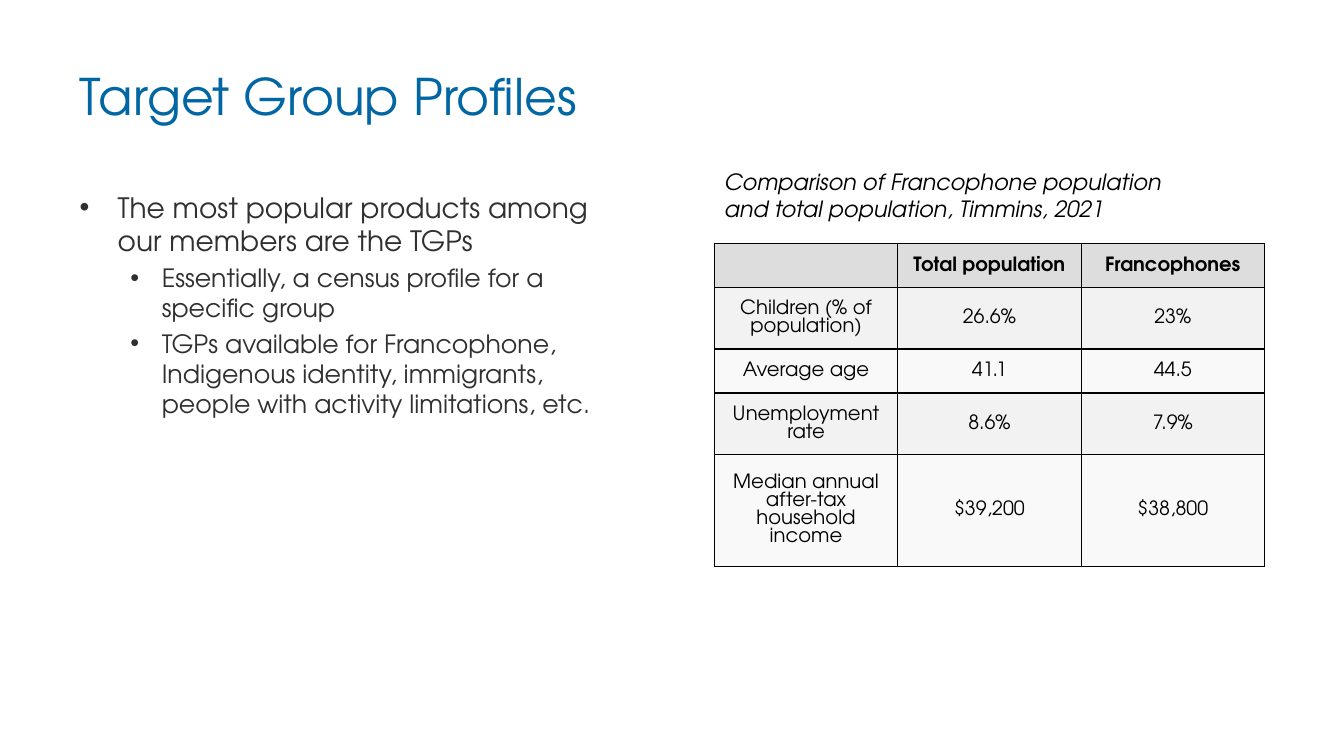
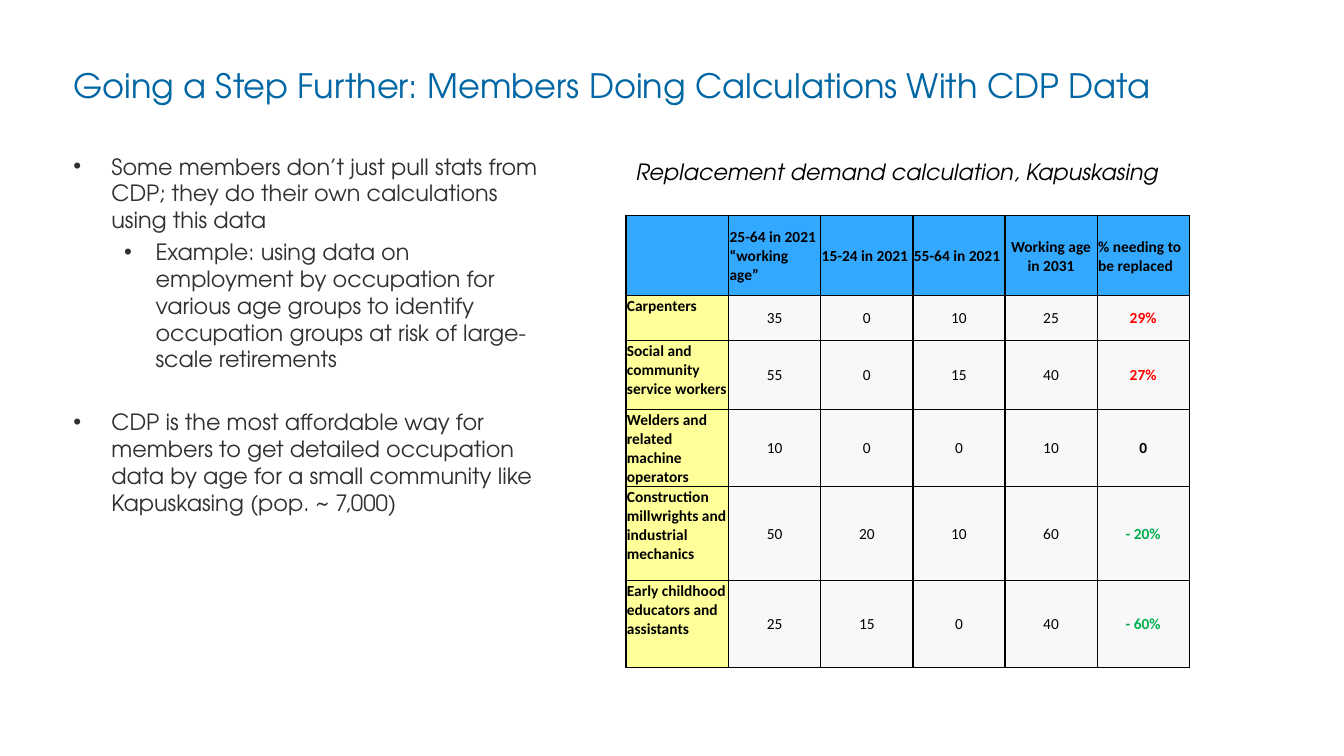
"""Build two slides on community data profiles, each with bullets and a table."""
from lxml import etree
from pptx import Presentation
from pptx.dml.color import RGBColor
from pptx.enum import text as t
from pptx.oxml import ns
from pptx.util import Pt

COLORS = {
    "title": "0066A4", "body": "303030", "black": "000000",
    "head": "DDDDDD", "odd": "F2F2F2", "even": "F9F9F9",
    "blue": "33A8FF", "yellow": "FFFF99", "pale": "F8F8F8",
    "rise": "FF0000", "fall": "00B050",
}
FONT = "TeX Gyre Adventor"
INDENTS = [(27.2, -27.2), (58.7, -22.5)]
LEFT, CENTER = t.PP_ALIGN.LEFT, t.PP_ALIGN.CENTER
TOP, MIDDLE = t.MSO_ANCHOR.TOP, t.MSO_ANCHOR.MIDDLE
NO_INSETS = dict.fromkeys(("margin_left", "margin_top", "margin_right", "margin_bottom"), 0)
TIGHT_INSETS = NO_INSETS | dict.fromkeys(("margin_left", "margin_top", "margin_right"), Pt(0.7))


def rgb(name):
    """Look up a colour by name."""
    return RGBColor.from_string(COLORS[name])


def apply(target, values):
    """Set attributes from a dict of format values."""
    for key, value in values.items():
        setattr(target, key, value)


def add_run(p, content, size, color, name=FONT, **style):
    """Add one formatted run to a paragraph."""
    r = p.add_run()
    r.text = content
    apply(r.font, {"size": Pt(size), "name": name, **style})
    r.font.color.rgb = rgb(color)


def add_box(s, box, insets=None):
    """Add a wrapping text box and return its text frame."""
    tf = s.shapes.add_textbox(*map(Pt, box)).text_frame
    apply(tf, {"word_wrap": True, "vertical_anchor": TOP, **(insets or {})})
    return tf


def add_title(s, content, left, width, size):
    """Add the slide title."""
    tf = add_box(s, (left, 46.5, width, 48.2), NO_INSETS)
    add_run(tf.paragraphs[0], content, size, "title")


def add_caption(s, content, box):
    """Add the italic caption above a table."""
    add_run(add_box(s, box).paragraphs[0], content, 16, "black", italic=True)


def add_bullet(p, level):
    """Give a paragraph a hanging round bullet."""
    margin, indent = INDENTS[level]
    p.level = level
    pPr = p._p.get_or_add_pPr()
    pPr.set("marL", str(Pt(margin)))
    pPr.set("indent", str(Pt(indent)))
    etree.SubElement(pPr, ns.qn("a:buFont")).set("typeface", "Arial")
    etree.SubElement(pPr, ns.qn("a:buChar")).set("char", "•")


def add_bullets(s, box, items):
    """Add a bullet list from (level, size, space before, text) items."""
    tf = add_box(s, box, NO_INSETS)
    for i, (level, size, before, content) in enumerate(items):
        p = tf.add_paragraph() if i else tf.paragraphs[0]
        add_bullet(p, level)
        p.space_before = Pt(before)
        add_run(p, content, size, "body")


def add_borders(cell):
    """Draw a thin black line on every side of a cell."""
    tcPr = cell._tc.get_or_add_tcPr()
    for side in ("lnL", "lnR", "lnT", "lnB"):
        ln = etree.SubElement(tcPr, ns.qn(f"a:{side}"), w=str(Pt(1)))
        fill = etree.SubElement(ln, ns.qn("a:solidFill"))
        etree.SubElement(fill, ns.qn("a:srgbClr"), val=COLORS["black"])


def add_table(s, left, top, widths, heights, rows, cell_format):
    """Add a bordered table, styling each cell by cell_format(row, col, text)."""
    box = (left, top, sum(widths), sum(heights))
    table = s.shapes.add_table(len(rows), len(widths), *map(Pt, box)).table
    apply(table, {"first_row": False, "horz_banding": False})
    for col, width in zip(table.columns, widths):
        col.width = Pt(width)
    for i, (row, height) in enumerate(zip(rows, heights)):
        table.rows[i].height = Pt(height)
        for j, content in enumerate(row):
            cell = table.cell(i, j)
            fill, frame, align, font = cell_format(i, j, content)
            add_borders(cell)
            cell.fill.solid()
            cell.fill.fore_color.rgb = rgb(fill)
            apply(cell, frame)
            p = cell.text_frame.paragraphs[0]
            p.alignment = align
            if content:
                add_run(p, content, **font)


def profile_cell(i, j, content):
    """Style a cell of the population comparison."""
    fill = "head" if i == 0 else ("even", "odd")[i % 2]
    font = {"size": 14, "color": "black", "bold": i == 0}
    return fill, {"vertical_anchor": MIDDLE}, CENTER, font


def demand_cell(i, j, content):
    """Style a cell of the replacement demand table."""
    fill = "blue" if i == 0 else "yellow" if j == 0 else "pale"
    color = "black"
    if i and content.endswith("%"):
        color = "fall" if content.startswith("-") else "rise"
    anchor = TOP if i and j == 0 else MIDDLE
    align = CENTER if j == 4 or (i and j) else LEFT
    font = {"size": 11, "color": color, "name": "Calibri", "bold": i == 0 or j in (0, 5)}
    return fill, {"vertical_anchor": anchor, **TIGHT_INSETS}, align, font


def build_profiles(s):
    """Build the target group profiles slide."""
    add_title(s, "Target Group Profiles", 56.9, 843.8, 36)
    add_bullets(s, (56.9, 135.8, 393, 367), [
        (0, 20, 0, "The most popular products among our members are the TGPs"),
        (1, 18, 3.6, "Essentially, a census profile for a specific group"),
        (1, 18, 3.6, "TGPs available for Francophone, Indigenous identity, immigrants, "
                     "people with activity limitations, etc."),
    ])
    add_table(s, 510.3, 174, [131] * 3, [31.5, 43.8, 31.5, 43.8, 80], [
        ("", "Total population", "Francophones"),
        ("Children (% of population)", "26.6%", "23%"),
        ("Average age", "41.1", "44.5"),
        ("Unemployment rate", "8.6%", "7.9%"),
        ("Median annual after-tax household income", "$39,200", "$38,800"),
    ], profile_cell)
    add_caption(s, "Comparison of Francophone population and total population, Timmins, 2021",
                (510.3, 116.8, 330, 46))


def build_demand(s):
    """Build the replacement demand slide."""
    add_title(s, "Going a Step Further: Members Doing Calculations With CDP Data", 52.4, 770, 24)
    add_bullets(s, (52.4, 109.1, 340.6, 367), [
        (0, 16, 0, "Some members don’t just pull stats from CDP; they do their own "
                   "calculations using this data"),
        (1, 16, 3.4, "Example: using data on employment by occupation for various age groups "
                     "to identify occupation groups at risk of large-scale retirements"),
        (0, 16, 25.5, "CDP is the most affordable way for members to get detailed occupation "
                      "data by age for a small community like Kapuskasing (pop. ~ 7,000)"),
    ])
    add_table(s, 447.1, 154.2, [73.4] + [65.8] * 5, [57, 32.2, 49, 55.3, 67, 62.3], [
        ("", "25-64 in 2021 “working age”", "15-24 in 2021", "55-64 in 2021",
         "Working age in 2031", "% needing to be replaced"),
        ("Carpenters", "35", "0", "10", "25", "29%"),
        ("Social and community service workers", "55", "0", "15", "40", "27%"),
        ("Welders and related machine operators", "10", "0", "0", "10", "0"),
        ("Construction millwrights and industrial mechanics", "50", "20", "10", "60", "- 20%"),
        ("Early childhood educators and assistants", "25", "15", "0", "40", "- 60%"),
    ], demand_cell)
    add_caption(s, "Replacement demand calculation, Kapuskasing", (447.1, 109.4, 402.5, 26.6))


def main():
    """Build and save the presentation."""
    prs = Presentation()
    apply(prs, {"slide_width": Pt(960), "slide_height": Pt(540)})
    for build in (build_profiles, build_demand):
        build(prs.slides.add_slide(prs.slide_layouts[6]))
    prs.save("out.pptx")


if __name__ == "__main__":
    main()
